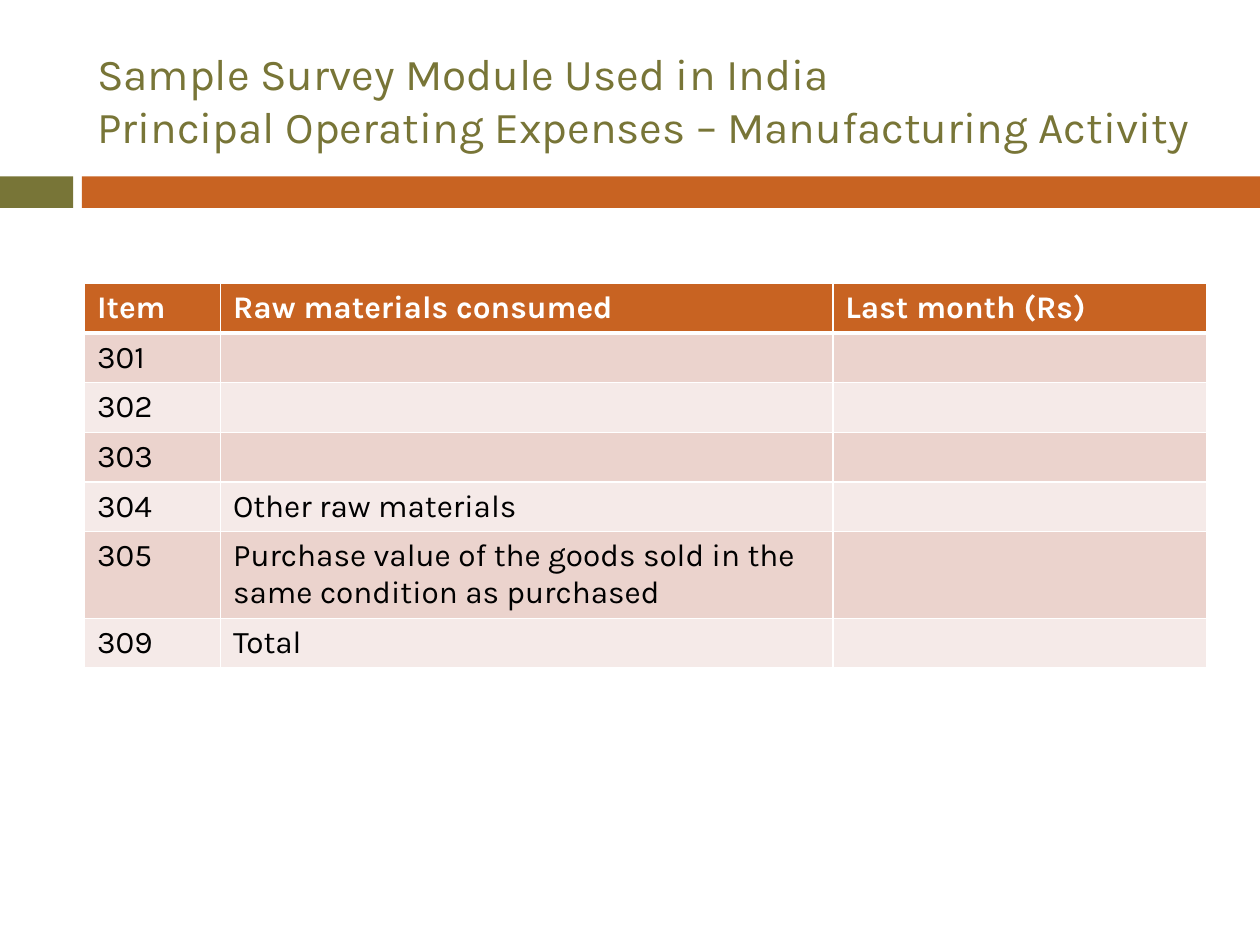
from dataclasses import dataclass

from lxml import etree
from pptx import Presentation
from pptx.dml.color import RGBColor
from pptx.enum.shapes import MSO_SHAPE
from pptx.enum.text import MSO_ANCHOR, MSO_AUTO_SIZE, PP_ALIGN
from pptx.oxml.ns import qn
from pptx.util import Inches, Pt

RECTANGLE = MSO_SHAPE.RECTANGLE
MIDDLE = MSO_ANCHOR.MIDDLE
LEFT = PP_ALIGN.LEFT
NO_AUTOFIT = MSO_AUTO_SIZE.NONE


@dataclass(frozen=True)
class Theme:
    font: str = "Karla"
    olive: str = "787537"
    orange: str = "C86322"
    white: str = "FFFFFF"
    black: str = "000000"
    bands: tuple[str, str] = ("EBD3CD", "F5EAE8")
    title_size: float = 25.2
    table_size: float = 18
    border: float = 1
    header_border: float = 3


@dataclass(frozen=True)
class Bar:
    left: float
    width: float
    color: str


@dataclass(frozen=True)
class Expense:
    item: str
    material: str = ""
    amount: str = ""
    height: float = 0.39


THEME = Theme()
MARGIN, CONTENT_WIDTH = 0.67, 8.92
BAR_TOP, BAR_HEIGHT = 1.4, 0.25
TABLE_TOP = 2.25
COLUMN_WIDTHS = (1.08, 4.86, 2.97)

BARS = (Bar(0, 0.58, THEME.olive), Bar(0.65, 9.35, THEME.orange))
TITLE = (
    "Sample Survey Module Used in India \n"
    "Principal Operating Expenses – Manufacturing Activity"
)
ROWS = (
    Expense("Item", "Raw materials consumed", "Last month (Rs)"),
    Expense("301"),
    Expense("302"),
    Expense("303"),
    Expense("304", "Other raw materials"),
    Expense(
        "305",
        "Purchase value of the goods sold in the same condition as purchased",
        height=0.69,
    ),
    Expense("309", "Total"),
)


def write_text(frame, text: str, *, size: float, color: str, bold: bool = False) -> None:
    """Write one paragraph, with a line break at each newline."""
    frame.word_wrap = True
    para = frame.paragraphs[0]
    para.alignment = LEFT
    for number, line in enumerate(text.split("\n")):
        if number:
            para.add_line_break()
        span = para.add_run()
        span.text = line
        span.font.name = THEME.font
        span.font.size = Pt(size)
        span.font.bold = bold
        span.font.color.rgb = RGBColor.from_string(color)


def size_blank_cell(cell) -> None:
    """Give an empty cell the table's font, so that its row keeps its height."""
    para = cell.text_frame.paragraphs[0]
    ending = etree.SubElement(
        para._p, qn("a:endParaRPr"), sz=str(int(THEME.table_size * 100))
    )
    etree.SubElement(ending, qn("a:latin"), typeface=THEME.font)


def set_borders(cell, bottom: float, top: float) -> None:
    properties = cell._tc.get_or_add_tcPr()
    widths = {"lnL": THEME.border, "lnR": THEME.border, "lnT": top, "lnB": bottom}
    for position, (side, width) in enumerate(widths.items()):
        line = etree.Element(qn(f"a:{side}"), w=str(Pt(width)))
        fill = etree.SubElement(line, qn("a:solidFill"))
        etree.SubElement(fill, qn("a:srgbClr"), val=THEME.white)
        properties.insert(position, line)


def draw_bar(page, bar: Bar) -> None:
    box = page.shapes.add_shape(
        RECTANGLE, Inches(bar.left), Inches(BAR_TOP), Inches(bar.width), Inches(BAR_HEIGHT)
    )
    box.shadow.inherit = False
    box.fill.solid()
    box.fill.fore_color.rgb = RGBColor.from_string(bar.color)
    box.line.fill.background()


def draw_title(page) -> None:
    title = page.shapes.title
    title.left, title.top = Inches(MARGIN), Inches(0.25)
    title.width, title.height = Inches(CONTENT_WIDTH), Inches(1.08)
    title.text_frame.auto_size = NO_AUTOFIT
    title.text_frame.vertical_anchor = MIDDLE
    write_text(title.text_frame, TITLE, size=THEME.title_size, color=THEME.olive)


def draw_table(page, rows: tuple[Expense, ...]) -> None:
    table = page.shapes.add_table(
        len(rows),
        len(COLUMN_WIDTHS),
        Inches(MARGIN),
        Inches(TABLE_TOP),
        Inches(CONTENT_WIDTH),
        Inches(sum(row.height for row in rows)),
    ).table
    table.horz_banding = False
    for column, width in zip(table.columns, COLUMN_WIDTHS):
        column.width = Inches(width)

    for row_number, row in enumerate(rows):
        table.rows[row_number].height = Inches(row.height)
        header = row_number == 0
        fill = THEME.orange if header else THEME.bands[(row_number - 1) % 2]
        color = THEME.white if header else THEME.black
        bottom = THEME.header_border if header else THEME.border
        top = THEME.header_border if row_number == 1 else THEME.border
        for column_number, text in enumerate((row.item, row.material, row.amount)):
            cell = table.cell(row_number, column_number)
            cell.fill.solid()
            cell.fill.fore_color.rgb = RGBColor.from_string(fill)
            set_borders(cell, bottom, top)
            if text:
                write_text(
                    cell.text_frame, text, size=THEME.table_size, color=color, bold=header
                )
            else:
                size_blank_cell(cell)


def main() -> None:
    deck = Presentation()
    deck.slide_width, deck.slide_height = Inches(10), Inches(7.5)
    page = deck.slides.add_slide(deck.slide_layouts[5])  # title only

    # Heading and the bars below it
    draw_title(page)
    for bar in BARS:
        draw_bar(page, bar)

    # Expense table
    draw_table(page, ROWS)

    deck.save("out.pptx")


if __name__ == "__main__":
    main()
